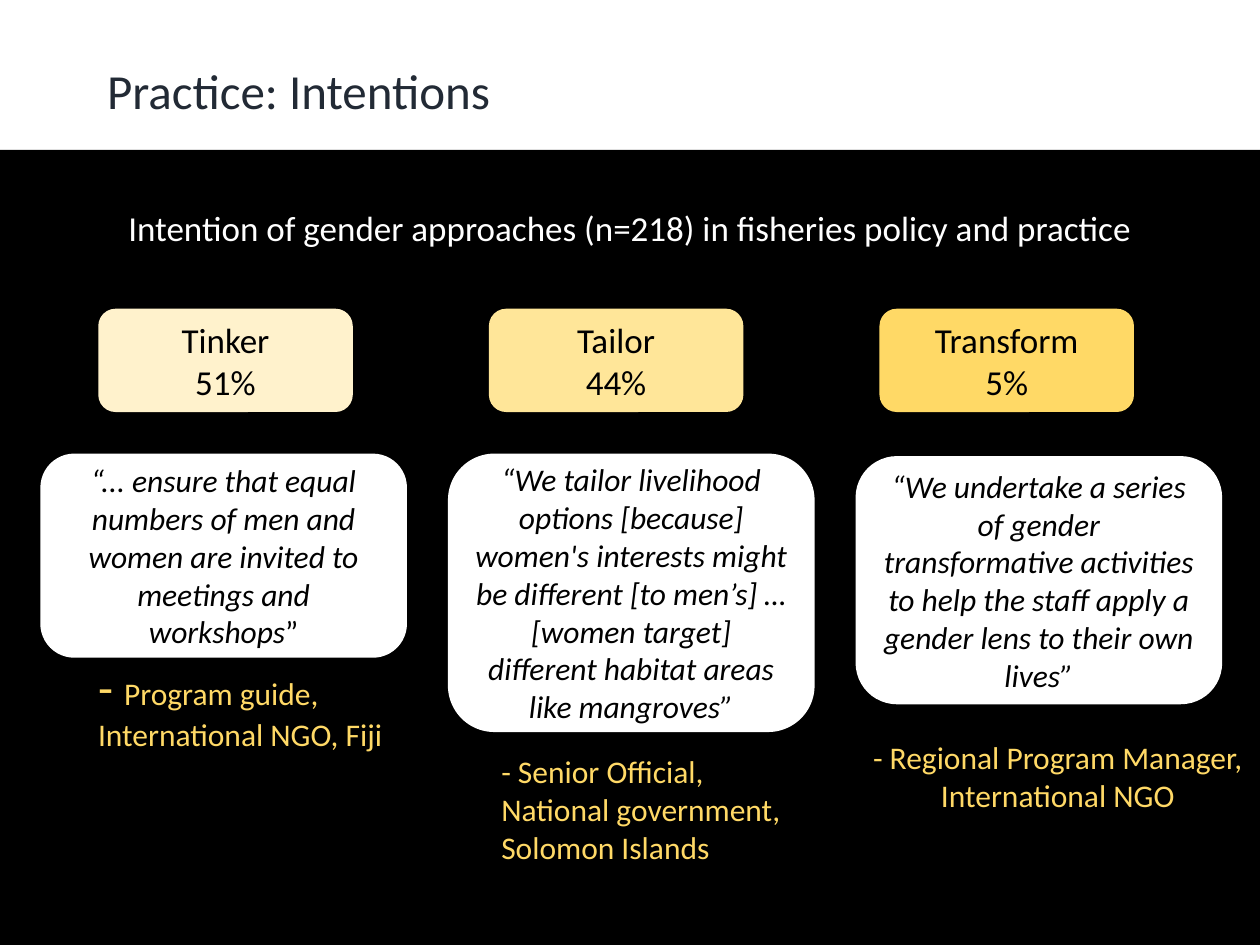
import pptx
import pptx.util
import pptx.dml.color
import pptx.enum.shapes
import pptx.enum.text

Inches = pptx.util.Inches
SHAPE = pptx.enum.shapes.MSO_SHAPE
ANCHOR = pptx.enum.text.MSO_ANCHOR
ALIGN = pptx.enum.text.PP_ALIGN

COLORS = {
    "black": "000000", "white": "FFFFFF", "navy": "222A35",
    "cream": "FFF2CC", "sand": "FFE699", "gold": "FFD966",
}
TITLE = "Practice: Intentions"
HEADING = "Intention of gender approaches (n=218) in fisheries policy and practice"
APPROACHES = [
    {"label": ["Tinker", "51%"], "fill": "cream",
     "quote": [("“... ensure that equal numbers of men and women are invited to meetings and workshops",
                {"italic": True}), ("”", {})],
     "quote_top": 3.6, "quote_height": 1.62,
     "source": [("- ", {"size": 28}), ("Program guide, International NGO, Fiji", {})],
     "source_box": (0.68, 5.16, 2.7, 0.88), "align": ALIGN.LEFT},
    {"label": ["Tailor", "44%"], "fill": "sand",
     "quote": [("“We tailor livelihood options [because] women's interests might be different "
                "[to men’s] … [women target] different habitat areas like mangroves”",
                {"italic": True})],
     "quote_top": 3.6, "quote_height": 2.21,
     "source": [("- Senior Official, National government, Solomon Islands", {})],
     "source_box": (3.88, 5.92, 2.59, 1.31), "align": ALIGN.LEFT},
    {"label": ["Transform", "5%"], "fill": "gold",
     "quote": [("“We undertake a series of gender transformative activities to help the staff "
                "apply a gender lens to their own lives”", {"italic": True})],
     "quote_top": 3.62, "quote_height": 1.97,
     "source": [("- Regional Program Manager, International NGO", {})],
     "source_box": (6.79, 5.81, 3.21, 1.01), "align": ALIGN.CENTER},
]
LABEL_LEFT, LABEL_PITCH = 0.78, 3.1
QUOTE_LEFT, QUOTE_PITCH = 0.32, 3.235


def rgb(name):
    return pptx.dml.color.RGBColor.from_string(COLORS[name])


def write(s, paragraphs, size, color, align=ALIGN.LEFT, anchor=ANCHOR.TOP, wrap=True):
    tf = s.text_frame
    frame = {"word_wrap": wrap, "vertical_anchor": anchor,
             "auto_size": pptx.enum.text.MSO_AUTO_SIZE.NONE}
    for key, value in frame.items():
        setattr(tf, key, value)
    for i, runs in enumerate(paragraphs):
        p = tf.add_paragraph() if i else tf.paragraphs[0]
        p.alignment = align
        for text, changes in runs:
            r = p.add_run()
            r.text = text
            font = {"name": "Calibri", "size": size, **changes}
            font["size"] = pptx.util.Pt(font["size"])
            for key, value in font.items():
                setattr(r.font, key, value)
            r.font.color.rgb = rgb(color)


def add_block(slide, kind, box, fill):
    s = slide.shapes.add_shape(kind, *map(Inches, box))
    s.shadow.inherit = False
    s.fill.solid()
    s.fill.fore_color.rgb = rgb(fill)
    s.line.fill.background()
    return s


def add_text(slide, box, runs, size, color, align=ALIGN.LEFT):
    s = slide.shapes.add_textbox(*map(Inches, box))
    write(s, [runs], size, color, align)


def main():
    prs = pptx.Presentation()
    prs.slide_width, prs.slide_height = Inches(10), Inches(7.5)
    slide = prs.slides.add_slide(prs.slide_layouts[5])

    add_block(slide, SHAPE.RECTANGLE, (0, 1.19, 10, 6.31), "black")
    title = slide.shapes.title
    place = {"left": 0.75, "top": 0.43, "width": 3.28, "height": 0.57}
    for key, value in place.items():
        setattr(title, key, Inches(value))
    write(title, [[(TITLE, {})]], 28, "navy", wrap=False)
    add_text(slide, (0.92, 1.59, 8.27, 0.44), [(HEADING, {})], 20, "white")

    for i, a in enumerate(APPROACHES):
        s = add_block(slide, SHAPE.ROUNDED_RECTANGLE,
                      (LABEL_LEFT + i * LABEL_PITCH, 2.45, 2.02, 0.82), a["fill"])
        write(s, [[(line, {})] for line in a["label"]], 20, "black",
              ALIGN.CENTER, ANCHOR.MIDDLE)
        s = add_block(slide, SHAPE.ROUNDED_RECTANGLE,
                      (QUOTE_LEFT + i * QUOTE_PITCH, a["quote_top"], 2.91, a["quote_height"]),
                      "white")
        write(s, [a["quote"]], 18, "black", ALIGN.CENTER, ANCHOR.MIDDLE)
        add_text(slide, a["source_box"], a["source"], 18, "gold", a["align"])

    prs.save("out.pptx")


if __name__ == "__main__":
    main()
